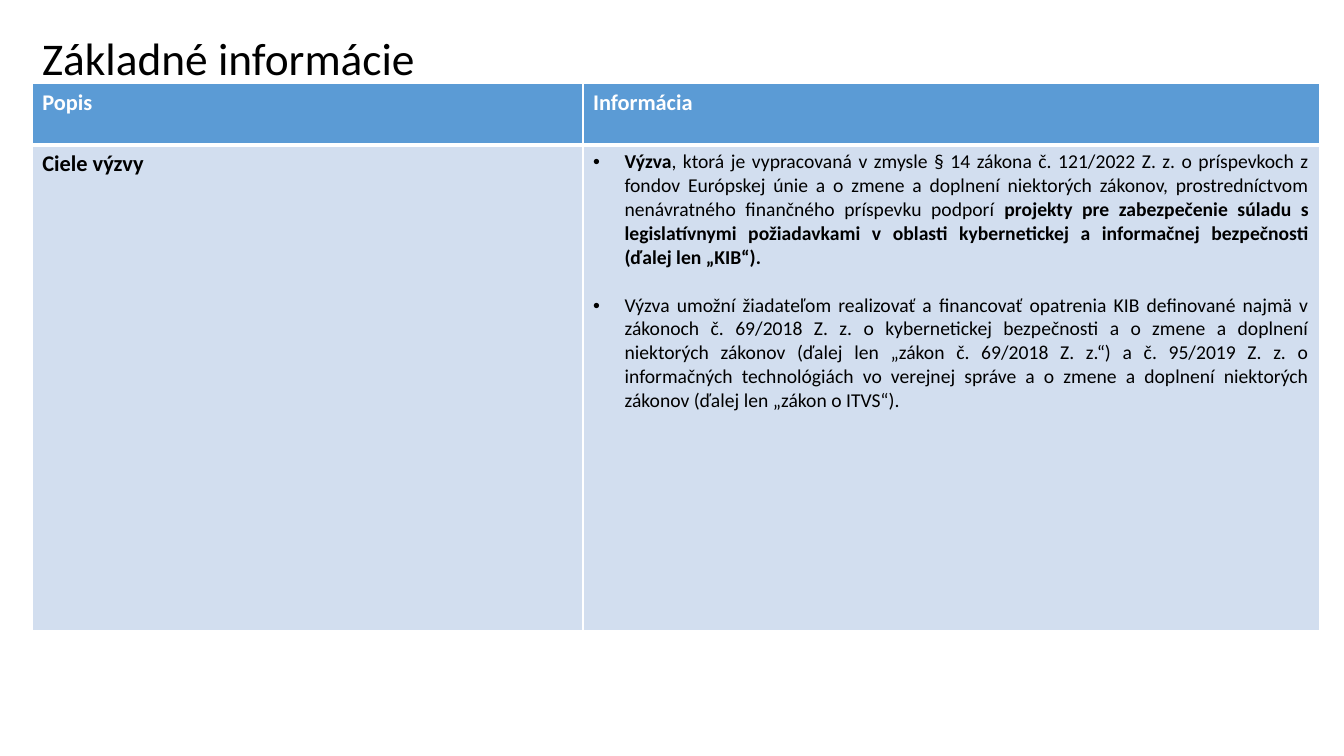
from lxml.etree import SubElement
from pptx import Presentation
from pptx.dml.color import RGBColor
from pptx.enum.text import MSO_ANCHOR, PP_ALIGN
from pptx.oxml.ns import qn
from pptx.util import Pt

MIDDLE = MSO_ANCHOR.MIDDLE
LEFT, JUST = PP_ALIGN.LEFT, PP_ALIGN.JUSTIFY
BLACK = RGBColor(0x00, 0x00, 0x00)
WHITE = RGBColor(0xFF, 0xFF, 0xFF)
BLUE = RGBColor(0x5B, 0x9B, 0xD5)
PALE = RGBColor(0xD2, 0xDE, 0xEF)
FONT = "Calibri"

TITLE = "Základné informácie"
HEADS = ["Popis", "Informácia"]
LABEL = "Ciele výzvy"
GOALS = [
    [
        ("Výzva", True),
        (", ktorá je vypracovaná v zmysle § 14 zákona č. 121/2022 Z. z. o príspevkoch z "
         "fondov Európskej únie a o zmene a doplnení niektorých zákonov, prostredníctvom "
         "nenávratného finančného príspevku podporí ", False),
        ("projekty pre zabezpečenie súladu s legislatívnymi požiadavkami v oblasti "
         "kybernetickej a informačnej bezpečnosti (ďalej len „KIB“).", True),
    ],
    [
        ("Výzva umožní žiadateľom realizovať a financovať opatrenia KIB definované najmä v "
         "zákonoch č. 69/2018 Z. z. o kybernetickej bezpečnosti a o zmene a doplnení "
         "niektorých zákonov (ďalej len „zákon č. 69/2018 Z. z.“) a č. 95/2019 Z. z. o "
         "informačných technológiách vo verejnej správe a o zmene a doplnení niektorých "
         "zákonov (ďalej len „zákon o ITVS“).", False),
    ],
]

EDGE, TOP = 23.04, 59.8
COLS = [393.4, 525.9]
ROWS = [43.9, 346.4]
INDENT = 22.5
GAP = 17.1


def write(frame, paras, size=16, color=BLACK, align=LEFT, bullet=False, gap=0, line=1):
    frame.word_wrap = True
    for i, runs in enumerate(paras):
        para = frame.paragraphs[0] if i == 0 else frame.add_paragraph()
        para.alignment = align
        para.line_spacing = line
        para.space_before = Pt(gap if i else 0)
        if bullet:
            props = para._p.get_or_add_pPr()
            props.set("marL", str(Pt(INDENT)))
            props.set("indent", str(-Pt(INDENT)))
            SubElement(props, qn("a:buFont"), typeface="Arial")
            SubElement(props, qn("a:buChar"), char="•")
        for text, bold in runs:
            run = para.add_run()
            run.text = text
            run.font.name = FONT
            run.font.size = Pt(size)
            run.font.bold = bold
            run.font.color.rgb = color


def border(cell, **widths):
    props = cell._tc.get_or_add_tcPr()
    for side, width in widths.items():
        line = SubElement(props, qn("a:ln" + side), w=str(Pt(width)))
        fill = SubElement(line, qn("a:solidFill"))
        SubElement(fill, qn("a:srgbClr"), val=str(WHITE))


def paint(cell, color):
    cell.fill.solid()
    cell.fill.fore_color.rgb = color


def main():
    deck = Presentation()
    deck.slide_width, deck.slide_height = Pt(960), Pt(540)
    slide = deck.slides.add_slide(deck.slide_layouts[6])

    title = slide.shapes.add_textbox(Pt(EDGE), Pt(23), Pt(720), Pt(36.7)).text_frame
    title.vertical_anchor = MIDDLE
    title.margin_top, title.margin_bottom = Pt(4), Pt(0)
    write(title, [[(TITLE, False)]], size=32.4, line=0.9)

    table = slide.shapes.add_table(
        len(ROWS), len(COLS), Pt(EDGE), Pt(TOP), Pt(sum(COLS)), Pt(sum(ROWS))
    ).table
    for col, width in zip(table.columns, COLS):
        col.width = Pt(width)
    for row, height in zip(table.rows, ROWS):
        row.height = Pt(height)

    for i, head in enumerate(HEADS):
        top, body = table.cell(0, i), table.cell(1, i)
        border(top, L=1, R=1, T=1, B=3)
        border(body, L=1, R=1, T=3, B=1)
        paint(top, BLUE)
        paint(body, PALE)
        write(top.text_frame, [[(head, True)]], color=WHITE)

    write(table.cell(1, 0).text_frame, [[(LABEL, True)]])
    write(table.cell(1, 1).text_frame, GOALS, size=14, align=JUST, bullet=True, gap=GAP)
    deck.save("out.pptx")


if __name__ == "__main__":
    main()
